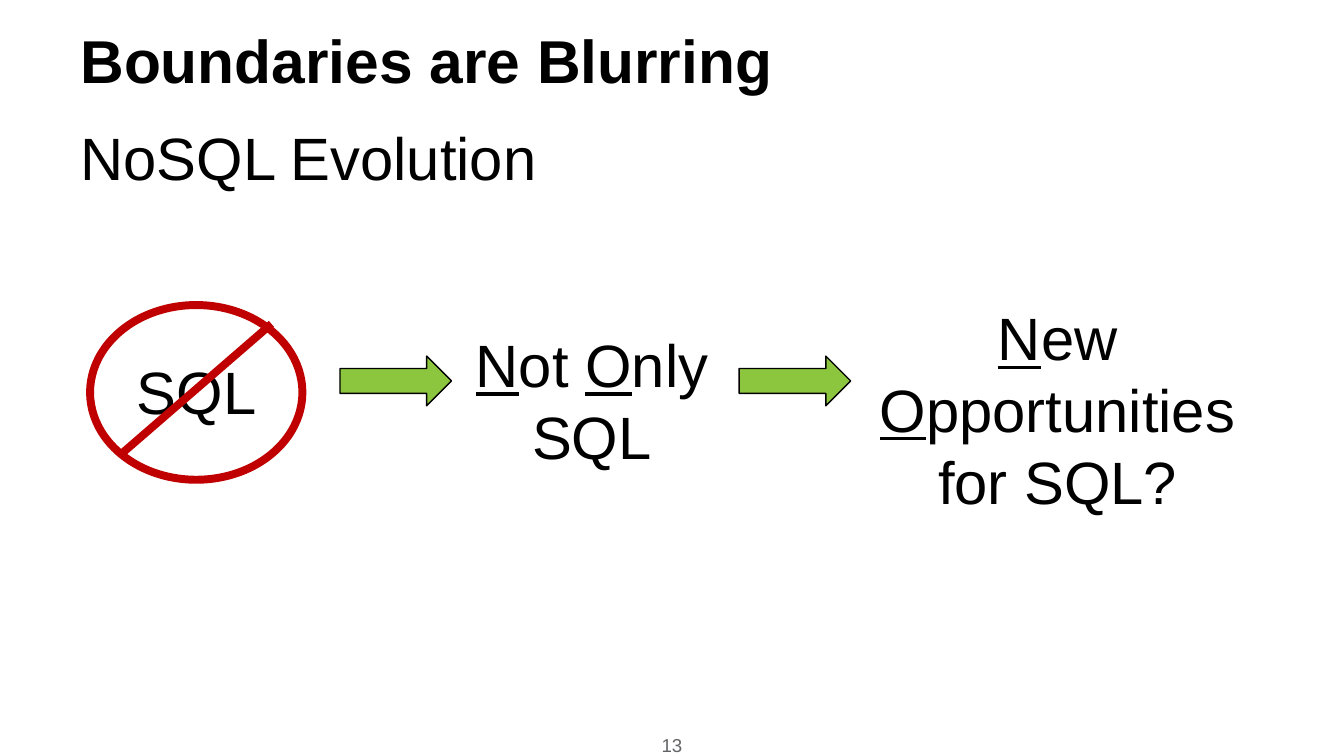
from pptx import Presentation
from pptx.dml.color import RGBColor
from pptx.enum.shapes import MSO_CONNECTOR, MSO_SHAPE
from pptx.enum.text import MSO_ANCHOR, PP_ALIGN
from pptx.oxml.ns import qn
from pptx.util import Inches, Pt
from lxml import etree

LEFT, CENTER = PP_ALIGN.LEFT, PP_ALIGN.CENTER
TOP, MIDDLE = MSO_ANCHOR.TOP, MSO_ANCHOR.MIDDLE
OVAL, RIGHT_ARROW = MSO_SHAPE.OVAL, MSO_SHAPE.RIGHT_ARROW
STRAIGHT = MSO_CONNECTOR.STRAIGHT

BLACK, WHITE, GREY, RED, GREEN = "000000", "FFFFFF", "616365", "C00000", "8CC63F"
FONT = "Arial"
BODY_SIZE = 32
BAN_WIDTH = 4.25

TITLE = "Boundaries are Blurring"
SUBTITLE = "NoSQL Evolution"
PAGE_NUMBER = "13"
STAGES = [
    ((0.92, 2.59, 1.1, 0.64), [["SQL"]], LEFT, False),
    ((3.43, 2.39, 1.95, 1.18), [["_N", "ot ", "_O", "nly"], ["SQL"]], CENTER, False),
    ((6.33, 2.19, 3.08, 1.72), [["_N", "ew ", "_O", "pportunities"], ["for SQL?"]], CENTER, True),
]
BAN_CIRCLE = (0.67, 2.27, 1.58, 1.3)
BAN_SLASH = (2.02, 2.41, 0.9, 3.38)
ARROW_LEFTS = [2.53, 5.5]
ARROW_TOP, ARROW_WIDTH, ARROW_HEIGHT = 2.65, 0.83, 0.37


def color(value):
    return RGBColor.from_string(value)


def add_text(slide, box, lines, size=BODY_SIZE, ink=BLACK, bold=False,
             align=LEFT, anchor=TOP, wrap=True):
    frame = slide.shapes.add_textbox(*map(Inches, box)).text_frame
    frame.word_wrap = wrap
    frame.vertical_anchor = anchor
    for number, pieces in enumerate(lines):
        paragraph = frame.add_paragraph() if number else frame.paragraphs[0]
        paragraph.alignment = align
        for piece in pieces:
            run = paragraph.add_run()
            run.text = piece.lstrip("_")
            run.font.name = FONT
            run.font.size = Pt(size)
            run.font.bold = bold
            run.font.underline = piece.startswith("_")
            run.font.color.rgb = color(ink)


def add_outlined(slide, kind, box, fill, line, width):
    shape = slide.shapes.add_shape(kind, *map(Inches, box))
    shape.shadow.inherit = False
    shape.fill.solid()
    shape.fill.fore_color.rgb = color(fill)
    shape.line.color.rgb = color(line)
    shape.line.width = Pt(width)


def main():
    deck = Presentation()
    deck.slide_width = Inches(10)
    deck.slide_height = deck.slide_width * 9 // 16
    slide = deck.slides.add_slide(deck.slide_layouts[6])

    add_text(slide, (0.5, 0.19, 9, 0.5), [[TITLE]], 32.4, bold=True, anchor=MIDDLE)
    add_text(slide, (0.5, 0.85, 9.08, 3.58), [[SUBTITLE]])
    add_text(slide, (4.75, 5.41, 0.5, 0.2), [[PAGE_NUMBER]], 10, GREY, align=CENTER)

    add_outlined(slide, OVAL, BAN_CIRCLE, WHITE, RED, BAN_WIDTH)
    for box, lines, align, wrap in STAGES:
        add_text(slide, box, lines, align=align, wrap=wrap)

    slash = slide.shapes.add_connector(STRAIGHT, *map(Inches, BAN_SLASH))
    slash.line.color.rgb = color(RED)
    slash.line.width = Pt(BAN_WIDTH)
    etree.SubElement(slash._element.spPr, qn("a:effectLst"))

    for left in ARROW_LEFTS:
        add_outlined(slide, RIGHT_ARROW, (left, ARROW_TOP, ARROW_WIDTH, ARROW_HEIGHT),
                     GREEN, BLACK, 0.75)

    deck.save("out.pptx")


if __name__ == "__main__":
    main()
